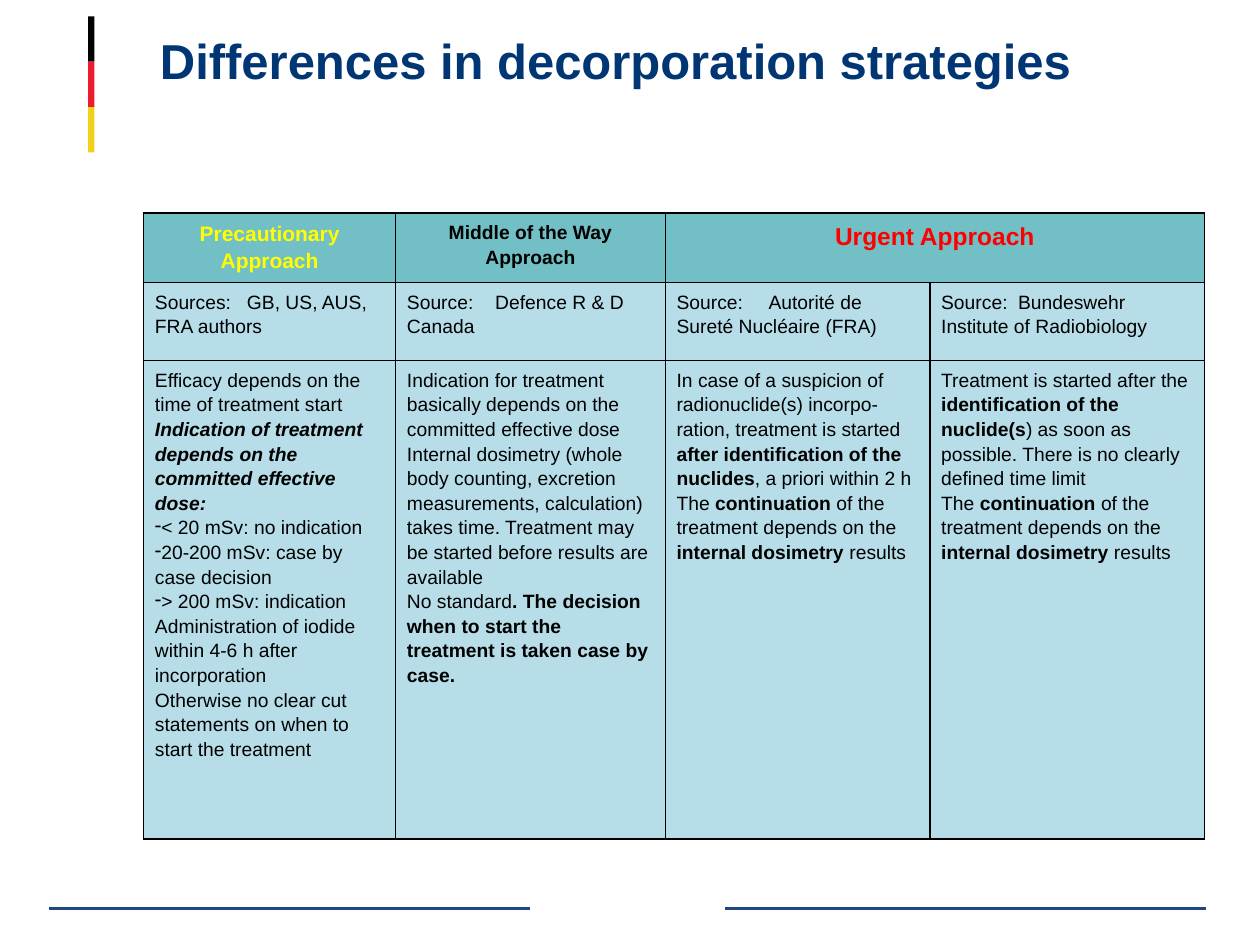
"""Build the slide that compares decorporation strategies."""
from dataclasses import dataclass

import lxml.etree
import pptx
import pptx.dml.color
import pptx.enum.shapes
import pptx.enum.text
import pptx.oxml.ns
import pptx.util
from pptx.util import Inches

COLORS = {
    "navy": "003674", "rule": "1F497D", "black": "000000", "red": "EC1B2E",
    "gold": "F2D11A", "header": "72BFC5", "body": "B6DDE8",
    "yellow": "FFFF00", "alert": "FF0000",
}
ALIGN = pptx.enum.text.PP_ALIGN


@dataclass
class Run:
    text: str
    bold: bool = False
    italic: bool = False


@dataclass
class Para:
    runs: list[Run]
    bullet: str = ""
    tab: float = 0


@dataclass
class Heading:
    text: str
    size: int
    color: str


@dataclass
class Source:
    label: str
    name: str
    tab: float


HEADINGS = [
    Heading("Precautionary Approach", 12, "yellow"),
    Heading("Middle of the Way Approach", 11, "black"),
    Heading("Urgent Approach", 14, "alert"),
]
SOURCES = [
    Source("Sources:", "GB, US, AUS, FRA authors", 0.73),
    Source("Source:", "Defence R & D Canada", 0.7),
    Source("Source:", "Autorité de Sureté Nucléaire (FRA)", 0.73),
    Source("Source:", "Bundeswehr Institute of Radiobiology", 0.61),
]
CONTINUATION = Para([
    Run("The "), Run("continuation", bold=True),
    Run(" of the treatment depends on the "),
    Run("internal dosimetry", bold=True), Run(" results"),
])
STRATEGIES = [
    [
        Para([Run("Efficacy depends on the time of treatment start")]),
        Para([Run("Indication of treatment depends on the committed effective dose:",
                  bold=True, italic=True)]),
        Para([Run("< 20 mSv: no indication")], bullet="-"),
        Para([Run("20-200 mSv: case by case decision")], bullet="-"),
        Para([Run("> 200 mSv: indication")], bullet="-"),
        Para([Run("Administration of iodide within 4-6 h after incorporation")]),
        Para([Run("Otherwise no clear cut statements on when to start the treatment")]),
    ],
    [
        Para([Run("Indication for treatment basically depends on the committed "
                  "effective dose")]),
        Para([Run("Internal dosimetry (whole body counting, excretion measurements, "
                  "calculation) takes time. Treatment may be started before results "
                  "are available")]),
        Para([Run("No standard"),
              Run(". The decision when to start the treatment is taken case by case.",
                  bold=True)]),
    ],
    [
        Para([Run("In case of a suspicion of radionuclide(s) incorpo-ration, "
                  "treatment is started "),
              Run("after identification of the nuclides", bold=True),
              Run(", a priori within 2 h")]),
        CONTINUATION,
    ],
    [
        Para([Run("Treatment is started after the "),
              Run("identification of the nuclide(s", bold=True),
              Run(") as soon as possible. There is no clearly defined time limit")]),
        CONTINUATION,
    ],
]


def rgb(name: str) -> pptx.dml.color.RGBColor:
    return pptx.dml.color.RGBColor.from_string(COLORS[name])


def add_text(paragraph, text: str, *, size: float = 11, color: str = "black",
             bold: bool = False, italic: bool = False) -> None:
    run = paragraph.add_run()
    run.text = text
    run.font.name = "Arial"
    run.font.size = pptx.util.Pt(size)
    run.font.bold = bold
    run.font.italic = italic
    run.font.color.rgb = rgb(color)


def add_child(parent, tag: str, **attributes: str):
    return lxml.etree.SubElement(parent, pptx.oxml.ns.qn(tag), attributes)


def add_rule(slide, left: float, right: float, y: float) -> None:
    rule = slide.shapes.add_connector(
        pptx.enum.shapes.MSO_CONNECTOR.STRAIGHT,
        Inches(left), Inches(y), Inches(right), Inches(y))
    rule.line.color.rgb = rgb("rule")
    rule.line.width = pptx.util.Pt(1.75)
    add_child(rule._element.spPr, "a:effectLst")


def add_stripe(slide, top: float, color: str) -> None:
    stripe = slide.shapes.add_shape(
        pptx.enum.shapes.MSO_SHAPE.RECTANGLE,
        Inches(0.7), Inches(top), Inches(0.05), Inches(0.36))
    stripe.shadow.inherit = False
    stripe.fill.solid()
    stripe.fill.fore_color.rgb = rgb(color)
    stripe.line.fill.background()


def style_cell(cell, fill: str) -> None:
    properties = cell._tc.get_or_add_tcPr()
    for side in ("a:lnL", "a:lnR", "a:lnT", "a:lnB"):
        border = add_child(properties, side, w=str(pptx.util.Pt(1)))
        add_child(add_child(border, "a:solidFill"), "a:srgbClr", val=COLORS["black"])
    cell.fill.solid()
    cell.fill.fore_color.rgb = rgb(fill)
    cell.margin_left = cell.margin_right = Inches(0.09)
    cell.margin_top = cell.margin_bottom = Inches(0.05)


def fill_cell(cell, paras: list[Para]) -> None:
    for index, para in enumerate(paras):
        frame = cell.text_frame
        paragraph = frame.add_paragraph() if index else frame.paragraphs[0]
        paragraph.line_spacing = 1.15
        properties = paragraph._p.get_or_add_pPr()
        if para.bullet:
            properties.set("marL", "0")
            properties.set("indent", "0")
            add_child(properties, "a:buChar", char=para.bullet)
        if para.tab:
            add_child(add_child(properties, "a:tabLst"), "a:tab",
                      pos=str(Inches(para.tab)), algn="l")
        for run in para.runs:
            add_text(paragraph, run.text, bold=run.bold, italic=run.italic)


def add_strategy_table(slide) -> None:
    widths, heights = [2, 2.14, 2.1, 2.18], [0.55, 0.62, 3.8]
    table = slide.shapes.add_table(
        len(heights), len(widths), Inches(1.14), Inches(1.69),
        Inches(sum(widths)), Inches(sum(heights))).table
    table.first_row = table.horz_banding = False
    for column, width in zip(table.columns, widths):
        column.width = Inches(width)
    for index, (row, height) in enumerate(zip(table.rows, heights)):
        row.height = Inches(height)
        for cell in row.cells:
            style_cell(cell, "body" if index else "header")
    table.cell(0, 2).merge(table.cell(0, 3))
    for index, heading in enumerate(HEADINGS):
        paragraph = table.cell(0, index).text_frame.paragraphs[0]
        paragraph.alignment = ALIGN.CENTER
        paragraph.line_spacing = 1.15
        add_text(paragraph, heading.text, size=heading.size, color=heading.color, bold=True)
    for index, (source, strategy) in enumerate(zip(SOURCES, STRATEGIES)):
        line = Run(f"{source.label}\t{source.name}")
        fill_cell(table.cell(1, index), [Para([line], tab=source.tab)])
        fill_cell(table.cell(2, index), strategy)


def add_title(slide) -> None:
    title = slide.shapes.title
    title.left, title.top = Inches(1.06), Inches(0.13)
    title.width, title.height = Inches(7.95), Inches(0.69)
    frame = title.text_frame
    frame.word_wrap = True
    frame.auto_size = pptx.enum.text.MSO_AUTO_SIZE.NONE
    frame.vertical_anchor = pptx.enum.text.MSO_ANCHOR.MIDDLE
    frame.margin_left = Inches(0.21)
    frame.paragraphs[0].alignment = ALIGN.LEFT
    add_text(frame.paragraphs[0], "Differences in decorporation strategies",
             size=28, color="navy", bold=True)


def main() -> None:
    deck = pptx.Presentation()
    deck.slide_width, deck.slide_height = Inches(10), Inches(7.5)
    slide = deck.slides.add_slide(deck.slide_layouts[5])
    for left in (0.39, 5.75):
        add_rule(slide, left, left + 3.82, 7.21)
    for index, color in enumerate(("black", "red", "gold")):
        add_stripe(slide, 0.13 + index * 0.36, color)
    add_strategy_table(slide)
    add_title(slide)
    deck.save("out.pptx")


if __name__ == "__main__":
    main()
